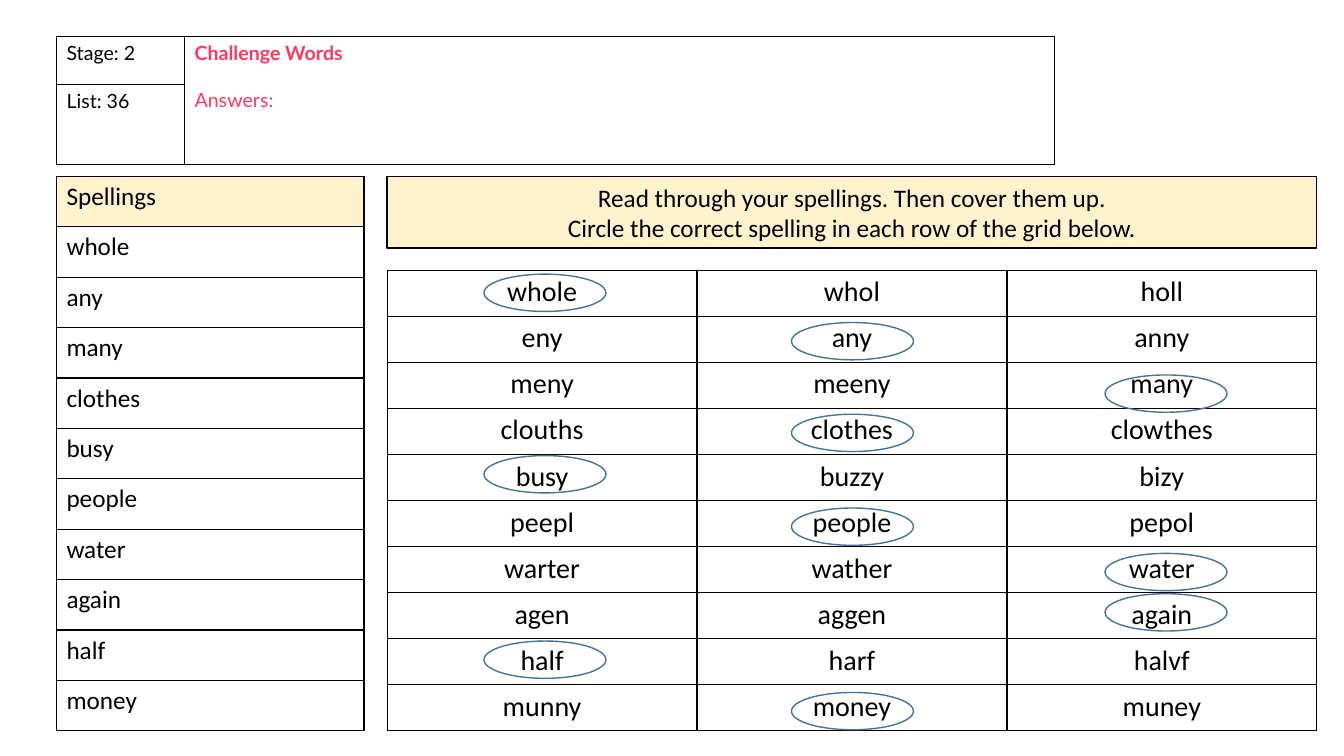
from dataclasses import dataclass

from lxml import etree
from pptx import Presentation
from pptx.dml.color import RGBColor
from pptx.enum.shapes import MSO_SHAPE
from pptx.enum.text import MSO_ANCHOR, PP_ALIGN
from pptx.oxml.ns import qn
from pptx.util import Inches, Pt

RECTANGLE = MSO_SHAPE.RECTANGLE
OVAL = MSO_SHAPE.OVAL
MIDDLE = MSO_ANCHOR.MIDDLE
LEFT = PP_ALIGN.LEFT
CENTER = PP_ALIGN.CENTER


@dataclass(frozen=True)
class Theme:
    ink: str = "000000"
    accent: str = "FF3860"
    cream: str = "FFF2CC"
    ring: str = "43739E"
    body_font: str = "Calibri"
    header_font: str = "Lato"
    header_size: int = 14
    body_size: int = 18
    grid_size: int = 20
    line_width: int = 1


THEME = Theme()
HEADER = {"name": THEME.header_font, "size": Pt(THEME.header_size), "color": THEME.ink}
ANSWER = {**HEADER, "color": THEME.accent, "bold": False}
TITLE = {**ANSWER, "bold": True}
BODY = {"name": THEME.body_font, "size": Pt(THEME.body_size), "color": THEME.ink}
GRID = {**BODY, "size": Pt(THEME.grid_size)}

SPELLINGS = ["whole", "any", "many", "clothes", "busy",
             "people", "water", "again", "half", "money"]
CHOICES = [
    ["whole", "whol", "holl"],
    ["eny", "any", "anny"],
    ["meny", "meeny", "many"],
    ["clouths", "clothes", "clowthes"],
    ["busy", "buzzy", "bizy"],
    ["peepl", "people", "pepol"],
    ["warter", "wather", "water"],
    ["agen", "aggen", "again"],
    ["half", "harf", "halvf"],
    ["munny", "money", "muney"],
]
RING_LEFTS = [0.96, 4.01, 7.12]
RING_TOPS = [0.04, 0.52, 1.04, 1.43, 1.84, 2.36, 2.81, 3.21, 3.68, 4.19]
RING_SIZE = (1.21, 0.37)


def write_text(frame, lines, style, align=LEFT):
    for index, line in enumerate(lines):
        para = frame.paragraphs[0] if index == 0 else frame.add_paragraph()
        para.alignment = align
        span = para.add_run()
        span.text = line
        for name, value in style.items():
            if name == "color":
                span.font.color.rgb = RGBColor.from_string(value)
            else:
                setattr(span.font, name, value)


def add_box(page, kind, box, line, fill=None):
    shape = page.shapes.add_shape(kind, *map(Inches, box))
    shape.shadow.inherit = False
    shape.line.color.rgb = RGBColor.from_string(line)
    shape.line.width = Pt(THEME.line_width)
    if fill:
        shape.fill.solid()
        shape.fill.fore_color.rgb = RGBColor.from_string(fill)
    else:
        shape.fill.background()
    return shape


def border_cell(cell):
    properties = cell._tc.get_or_add_tcPr()
    for side in ("lnL", "lnR", "lnT", "lnB"):
        edge = etree.SubElement(properties, qn(f"a:{side}"), w=str(Pt(THEME.line_width)))
        paint = etree.SubElement(edge, qn("a:solidFill"))
        etree.SubElement(paint, qn("a:srgbClr"), val=THEME.ink)


def add_plain_table(page, box, row_count, widths):
    frame = page.shapes.add_table(row_count, len(widths), *map(Inches, box))
    table = frame.table
    table.first_row = False
    table.horz_banding = False
    for column, width in zip(table.columns, widths):
        column.width = Inches(width)
    for row in table.rows:
        row.height = Inches(box[3] / row_count)
    for cell in table.iter_cells():
        border_cell(cell)
        cell.fill.background()
    return table


def add_header(page, box):
    label_width = 1.27
    table = add_plain_table(page, box, 2, [label_width, box[2] - label_width])
    table.cell(0, 1).merge(table.cell(1, 1))
    for row, label in enumerate(["Stage: 2", "List: 36"]):
        write_text(table.cell(row, 0).text_frame, [label], HEADER)
    frame = table.cell(0, 1).text_frame
    write_text(frame, ["Challenge Words"], TITLE)
    answers = frame.add_paragraph()
    answers.space_before = Pt(THEME.header_size * 1.2)
    span = answers.add_run()
    span.text = "Answers:"
    for name, value in ANSWER.items():
        if name == "color":
            span.font.color.rgb = RGBColor.from_string(value)
        else:
            setattr(span.font, name, value)


def add_spellings(page, box):
    words = ["Spellings", *SPELLINGS]
    table = add_plain_table(page, box, len(words), [box[2]])
    for row, word in enumerate(words):
        write_text(table.cell(row, 0).text_frame, [word], BODY)
    heading = table.cell(0, 0)
    heading.fill.solid()
    heading.fill.fore_color.rgb = RGBColor.from_string(THEME.cream)


def add_instructions(page, box):
    frame = add_box(page, RECTANGLE, box, THEME.ink, THEME.cream).text_frame
    frame.word_wrap = True
    frame.vertical_anchor = MIDDLE
    write_text(frame, ["Read through your spellings. Then cover them up.",
                       "Circle the correct spelling in each row of the grid below."],
               BODY, CENTER)


def add_choices(page, box):
    left, top, width, _ = box
    columns = len(CHOICES[0])
    table = add_plain_table(page, box, len(CHOICES), [width / columns] * columns)
    for row, words in enumerate(CHOICES):
        for column, word in enumerate(words):
            write_text(table.cell(row, column).text_frame, [word], GRID, CENTER)
    for words, answer, ring_top in zip(CHOICES, SPELLINGS, RING_TOPS):
        ring_left = RING_LEFTS[words.index(answer)]
        add_box(page, OVAL, (left + ring_left, top + ring_top, *RING_SIZE), THEME.ring)


def main():
    deck = Presentation()
    deck.slide_width = Inches(13.33)
    deck.slide_height = Inches(7.5)
    page = deck.slides.add_slide(deck.slide_layouts[6])
    add_spellings(page, (0.56, 1.75, 3.05, 5.5))
    add_header(page, (0.56, 0.36, 9.9, 0.95))
    add_instructions(page, (3.84, 1.75, 9.22, 0.71))
    add_choices(page, (3.84, 2.68, 9.22, 4.57))
    deck.save("out.pptx")


if __name__ == "__main__":
    main()
